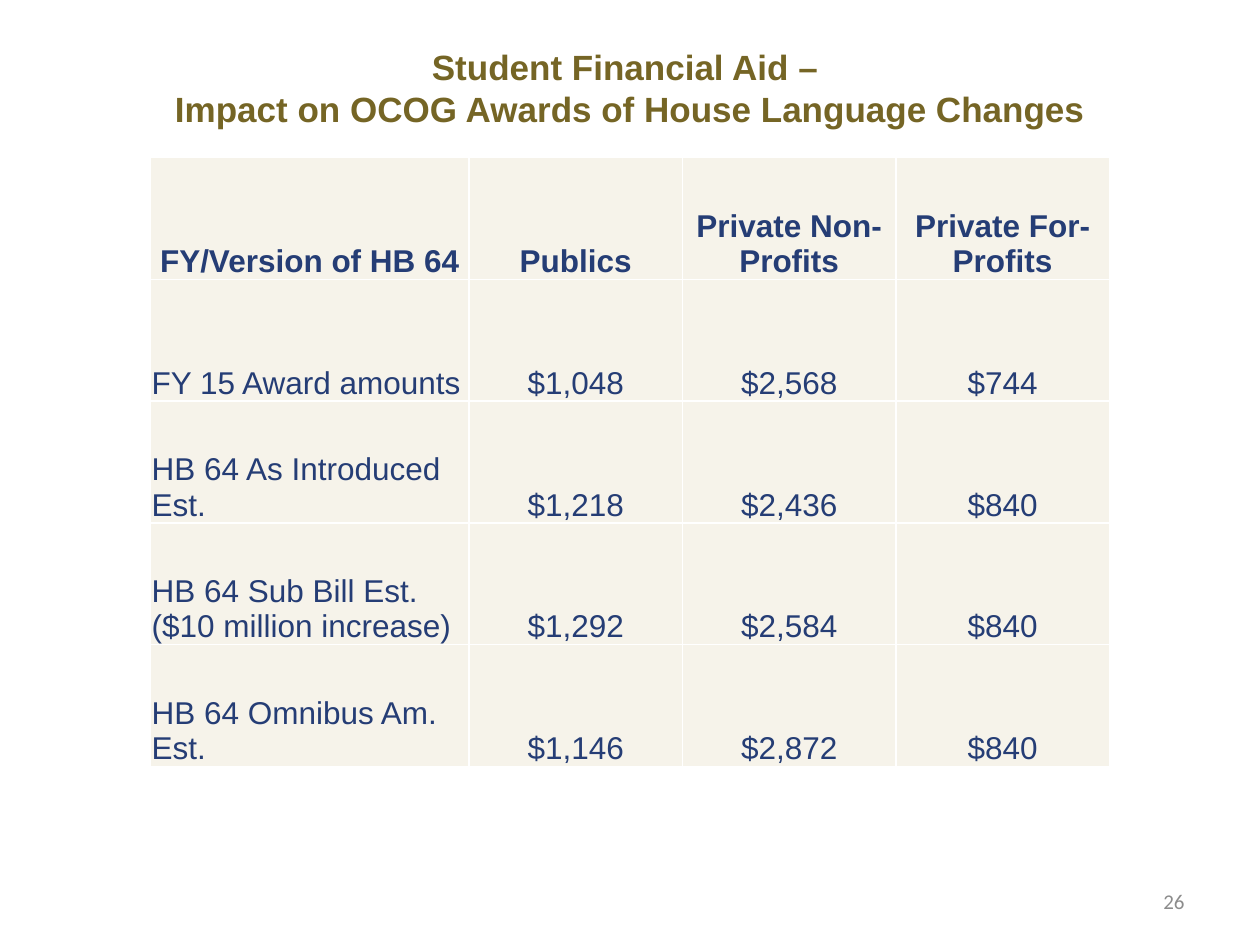
"""Build the slide on OCOG award amounts under each version of HB 64."""
from lxml.etree import SubElement
from pptx import Presentation
from pptx.dml.color import RGBColor
from pptx.enum.text import MSO_ANCHOR, PP_ALIGN
from pptx.oxml.ns import qn
from pptx.util import Pt

COLORS = {"title": "756525", "body": "253D75", "cell": "F6F3EA",
          "border": "FFFFFF", "number": "8C8C8C"}

AWARDS = [
    ("FY/Version of HB 64", "Publics", "Private Non-Profits", "Private For-Profits"),
    ("FY 15 Award amounts", "$1,048", "$2,568", "$744"),
    ("HB 64 As Introduced Est.", "$1,218", "$2,436", "$840"),
    ("HB 64 Sub Bill Est. ($10 million increase)", "$1,292", "$2,584", "$840"),
    ("HB 64 Omnibus Am. Est.", "$1,146", "$2,872", "$840"),
]


def style(paragraph, size, color, align, bold=False, font="Arial"):
    paragraph.alignment = align
    paragraph.font.name = font
    paragraph.font.size = Pt(size)
    paragraph.font.bold = bold
    paragraph.font.color.rgb = RGBColor.from_string(COLORS[color])


def add_text(slide, text, left, top, width, height):
    frame = slide.shapes.add_textbox(Pt(left), Pt(top), Pt(width), Pt(height)).text_frame
    frame.word_wrap = True
    frame.vertical_anchor = MSO_ANCHOR.MIDDLE
    frame.text = text
    return frame.paragraphs[0]


deck = Presentation()
deck.slide_width, deck.slide_height = Pt(720), Pt(540)
slide = deck.slides.add_slide(deck.slide_layouts[6])

title = add_text(slide, "Student Financial Aid – \vImpact on OCOG Awards of House Language Changes",
                 36, 21.6, 648, 56.2)
style(title, 20, "title", PP_ALIGN.CENTER, bold=True)

awards = slide.shapes.add_table(len(AWARDS), len(AWARDS[0]),
                                Pt(86), Pt(90), Pt(548), Pt(348)).table
for column, width in zip(awards.columns, (182, 122, 122, 122)):
    column.width = Pt(width)
for row, values in zip(awards.rows, AWARDS):
    row.height = Pt(69.6)
    for position, (cell, value) in enumerate(zip(row.cells, values)):
        is_header = values is AWARDS[0]
        is_label = position == 0 and not is_header
        cell.text = value
        cell.vertical_anchor = MSO_ANCHOR.BOTTOM
        cell.margin_left = cell.margin_right = cell.margin_top = Pt(0.7)
        cell.margin_bottom = Pt(0)
        style(cell.text_frame.paragraphs[0], 18, "body",
              PP_ALIGN.LEFT if is_label else PP_ALIGN.CENTER, bold=is_header)
        properties = cell._tc.get_or_add_tcPr()
        for side in ("lnL", "lnR", "lnT", "lnB"):
            border = SubElement(properties, qn(f"a:{side}"), w=str(Pt(1)))
            border_fill = SubElement(border, qn("a:solidFill"))
            SubElement(border_fill, qn("a:srgbClr"), val=COLORS["border"])
        cell.fill.solid()
        cell.fill.fore_color.rgb = RGBColor.from_string(COLORS["cell"])

number = add_text(slide, "26", 516, 500.5, 168, 28.75)
style(number, 12, "number", PP_ALIGN.RIGHT, font="Calibri")

deck.save("out.pptx")
